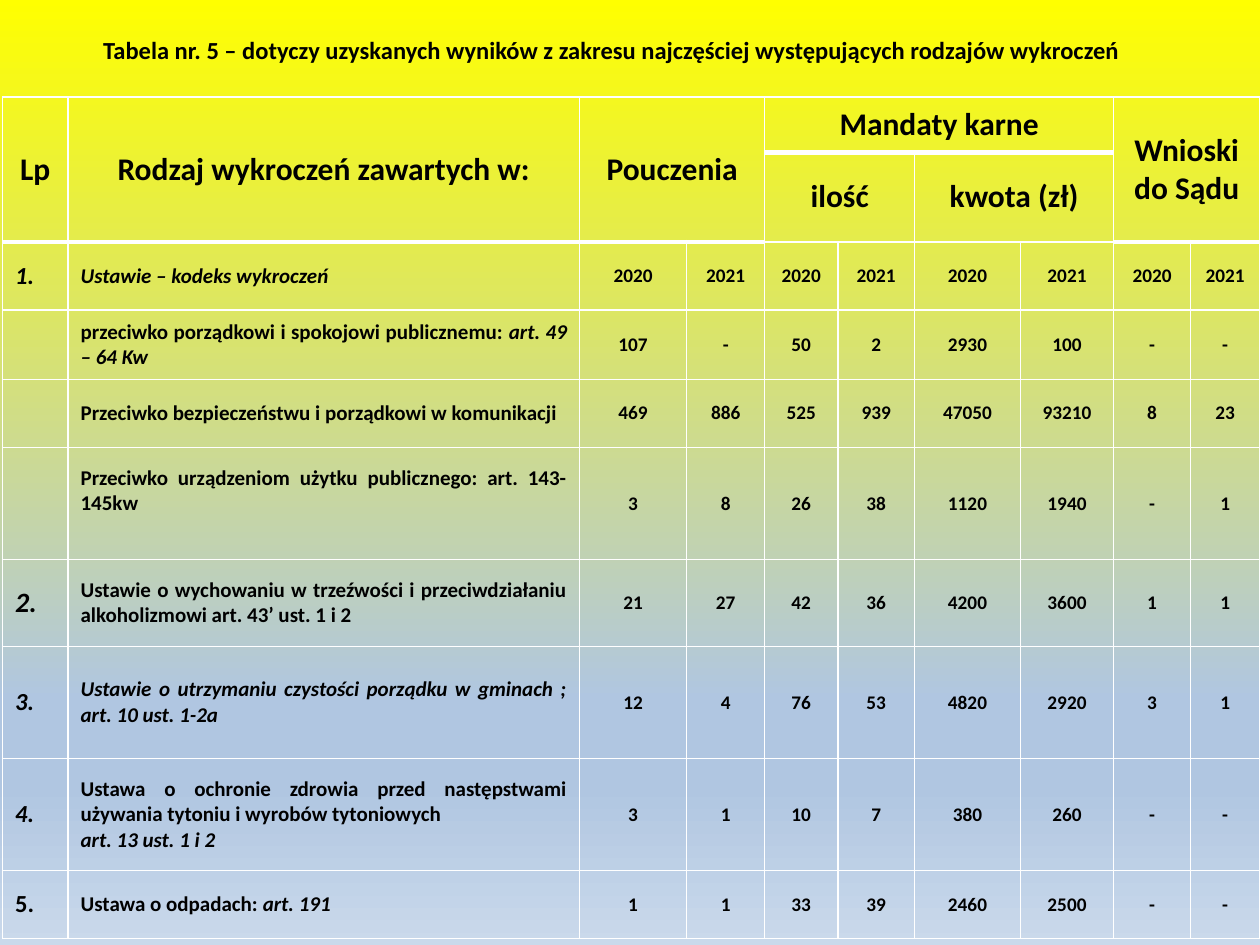
from lxml.etree import SubElement
from pptx import Presentation
from pptx.dml.color import RGBColor
from pptx.enum.text import MSO_ANCHOR, PP_ALIGN
from pptx.oxml import parse_xml
from pptx.oxml.ns import nsdecls, qn
from pptx.util import Inches, Pt

CENTER, JUSTIFY, LEFT = PP_ALIGN.CENTER, PP_ALIGN.JUSTIFY, PP_ALIGN.LEFT
MIDDLE = MSO_ANCHOR.MIDDLE


def rgb(value):
    return RGBColor.from_string(value)


def write(tf, text, size=11, align=CENTER, color="000000"):
    for i, line in enumerate(text.split("\n")):
        p = tf.paragraphs[0] if i == 0 else tf.add_paragraph()
        p.alignment = align
        for k, part in enumerate(line.split("|")):
            if part:
                r = p.add_run()
                r.text = part
                r.font.name = "Calibri"
                r.font.size = Pt(size)
                r.font.bold = True
                r.font.italic = k % 2 == 1
                r.font.color.rgb = rgb(color)


prs = Presentation()
prs.slide_width, prs.slide_height = Inches(10), Inches(7.5)
s = prs.slides.add_slide(prs.slide_layouts[6])

fill = s.background.fill
fill.gradient()
fill.gradient_angle = 270
stops = s.element.find(".//" + qn("a:gsLst"))
for gs in list(stops):
    stops.remove(gs)
for pos, color in [(0, "FFFF00"), (74, "B0C6E1"), (83, "B0C6E1"), (100, "CAD9EB")]:
    gs = SubElement(stops, qn("a:gs"), pos=str(pos * 1000))
    SubElement(gs, qn("a:srgbClr"), val=color)

cols = [0.52, 4.06, 0.85, 0.62, 0.58, 0.61, 0.84, 0.74, 0.61, 0.55]
rows = [0.44, 0.44, 0.54, 0.55, 0.54, 0.89, 0.69, 0.89, 0.89, 0.54]
sp = s.shapes.add_table(len(rows), len(cols), Inches(0.02), Inches(0.77),
                        Inches(sum(cols)), Inches(sum(rows)))
table = sp.table
table.first_row = table.horz_banding = False
for col, width in zip(table.columns, cols):
    col.width = Inches(width)
for row, height in zip(table.rows, rows):
    row.height = Inches(height)

headers = [
    (0, 0, 1, 0, "Lp"),
    (0, 1, 1, 1, "Rodzaj wykroczeń zawartych w:"),
    (0, 2, 1, 3, "Pouczenia"),
    (0, 4, 0, 7, "Mandaty karne"),
    (0, 8, 1, 9, "Wnioski do Sądu"),
    (1, 4, 1, 5, "ilość"),
    (1, 6, 1, 7, "kwota (zł)"),
]
for top, left, bottom, right, text in headers:
    cell = table.cell(top, left)
    cell.merge(table.cell(bottom, right))
    write(cell.text_frame, text, size=18)

body = [
    ("|1.", "|Ustawie – kodeks wykroczeń", "2020 2021 2020 2021 2020 2021 2020 2021"),
    ("", "przeciwko porządkowi i spokojowi publicznemu: |art. 49 – 64 Kw",
     "107 - 50 2 2930 100 - -"),
    ("", "Przeciwko bezpieczeństwu i porządkowi w komunikacji",
     "469 886 525 939 47050 93210 8 23"),
    ("", "Przeciwko urządzeniom użytku publicznego: art. 143-145kw",
     "3 8 26 38 1120 1940 - 1"),
    ("|2.", "Ustawie o wychowaniu w trzeźwości i przeciwdziałaniu alkoholizmowi "
     "art. 43’ ust. 1 i 2", "21 27 42 36 4200 3600 1 1"),
    ("|3.", "|Ustawie o utrzymaniu czystości porządku w gminach ; art. 10 ust. 1-2a",
     "12 4 76 53 4820 2920 3 1"),
    ("|4.", "Ustawa o ochronie zdrowia przed następstwami używania tytoniu "
     "i wyrobów tytoniowych\n|art. 13 ust. 1 i 2", "3 1 10 7 380 260 - -"),
    ("5.", "Ustawa o odpadach: |art. 191", "1 1 33 39 2460 2500 - -"),
]
for i, (number, offence, values) in enumerate(body, 2):
    write(table.cell(i, 0).text_frame, number, size=16 if number == "|2." else 14, align=JUSTIFY)
    write(table.cell(i, 1).text_frame, offence, size=12, align=JUSTIFY)
    for j, value in enumerate(values.split(), 2):
        write(table.cell(i, j).text_frame, value)
table.cell(5, 1).margin_bottom = Inches(0.25)

for i in range(len(rows)):
    for j in range(len(cols)):
        cell = table.cell(i, j)
        cell.vertical_anchor = MIDDLE
        cell.fill.background()
        under = 3 if i == 0 or (i == 1 and not 4 <= j <= 7) else 1
        over = 3 if i == 1 or (i == 2 and not 4 <= j <= 7) else 1
        tcPr = cell._tc.get_or_add_tcPr()
        for n, (side, width) in enumerate([("L", 1), ("R", 1), ("T", over), ("B", under)]):
            tcPr.insert(n, parse_xml(
                f'<a:ln{side} {nsdecls("a")} w="{Pt(width)}"><a:solidFill>'
                f'<a:srgbClr val="FFFFFF"/></a:solidFill></a:ln{side}>'))

sp = s.shapes.add_textbox(Inches(0.72), Inches(0.23), Inches(9.28), Inches(0.34))
tf = sp.text_frame
tf.word_wrap = True
write(tf, "Tabela nr. 5 – dotyczy uzyskanych wyników z zakresu najczęściej "
      "występujących rodzajów wykroczeń", size=14, align=LEFT)

prs.save("out.pptx")
